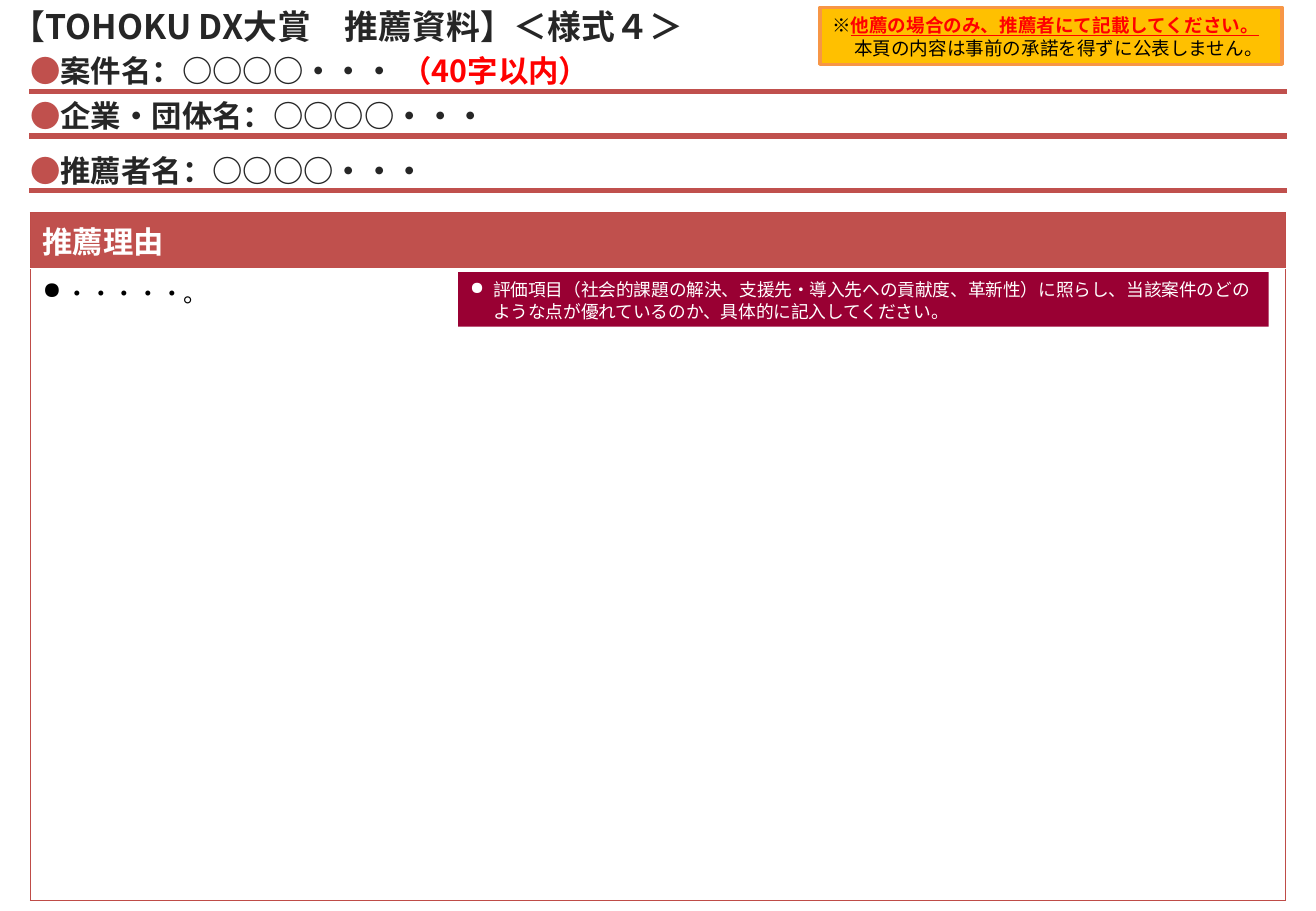
from dataclasses import dataclass

from lxml.etree import SubElement
from pptx import Presentation
from pptx.dml.color import RGBColor
from pptx.enum.shapes import MSO_CONNECTOR as Conn, MSO_SHAPE as Shape
from pptx.enum.text import MSO_ANCHOR as Anchor, MSO_AUTO_SIZE as Fit, PP_ALIGN as Align
from pptx.oxml.ns import qn
from pptx.util import Emu, Pt

PX = 9144  # 100 px to the inch


@dataclass(frozen=True)
class Theme:
    font: str = "Noto Sans CJK JP"
    accent: str = "C0504D"
    border: str = "BF4C48"
    ink: str = "262626"
    black: str = "000000"
    white: str = "FFFFFF"
    red: str = "FF0000"
    amber: str = "FFC000"
    orange: str = "F79646"
    wine: str = "990033"
    title: float = 20
    heading: float = 18
    body: float = 14
    notice: float = 11
    hint: float = 10.5
    leading: float = 1.25


T = Theme()


def px(n):
    return Emu(n * PX)


def rgb(color):
    return RGBColor.from_string(color)


def add_run(p, text, *, size, color, bold=False, underline=False):
    r = p.add_run()
    r.text = text
    f = r.font
    f.size, f.bold, f.underline, f.name = Pt(size), bold, underline, T.font
    f.color.rgb = rgb(color)
    SubElement(r._r.get_or_add_rPr(), qn("a:ea"), typeface=T.font)


def indent(p, left, bullet=None):
    pPr = p._p.get_or_add_pPr()
    pPr.set("marL", str(px(left)))
    if bullet:
        pPr.set("indent", str(-px(left)))
        SubElement(pPr, qn("a:buChar"), char=bullet)


class Sheet:
    def __init__(self, prs, theme):
        self.t = theme
        self.s = prs.slides.add_slide(prs.slide_layouts[6])

    def fill_text(self, tf, paragraphs, anchor=Anchor.TOP, wrap=True):
        """Each paragraph is a list of (text, format) pairs."""
        tf.word_wrap, tf.auto_size, tf.vertical_anchor = wrap, Fit.SHAPE_TO_FIT_TEXT, anchor
        for i, runs in enumerate(paragraphs):
            p = tf.add_paragraph() if i else tf.paragraphs[0]
            p.alignment = Align.LEFT
            p.line_spacing = Pt(runs[0][1]["size"] * self.t.leading)
            for text, fmt in runs:
                add_run(p, text, **fmt)
        return tf

    def text(self, x, y, w, h, runs, anchor=Anchor.TOP):
        tb = self.s.shapes.add_textbox(px(x), px(y), px(w), px(h))
        self.fill_text(tb.text_frame, [runs], anchor)

    def box(self, x, y, w, h, paragraphs, fill, line=None, wrap=True):
        sp = self.s.shapes.add_shape(Shape.RECTANGLE, px(x), px(y), px(w), px(h))
        sp.shadow.inherit = False
        sp.fill.solid()
        sp.fill.fore_color.rgb = rgb(fill)
        if line:
            sp.line.color.rgb, sp.line.width = rgb(line), Pt(2)
        else:
            sp.line.fill.background()
        return self.fill_text(sp.text_frame, paragraphs, wrap=wrap)

    def rule(self, x1, x2, y):
        c = self.s.shapes.add_connector(Conn.STRAIGHT, px(x1), px(y), px(x2), px(y))
        c.line.color.rgb, c.line.width = rgb(self.t.accent), Pt(3)
        SubElement(c._element.spPr, qn("a:effectLst"))

    def table(self, x, y, w, heights):
        tbl = self.s.shapes.add_table(len(heights), 1, px(x), px(y), px(w), px(sum(heights))).table
        tbl.first_row = tbl.horz_banding = False
        for row, h in zip(tbl.rows, heights):
            row.height = px(h)
        return tbl

    def cell(self, cell, text, sides, fill=None, bullet=None, **fmt):
        p = cell.text_frame.paragraphs[0]
        add_run(p, text, **fmt)
        if bullet:
            indent(p, 19, bullet)
        tcPr = cell._tc.get_or_add_tcPr()
        for side in sides:
            ln = SubElement(tcPr, qn(f"a:ln{side}"), w=str(Pt(0.75)))
            SubElement(SubElement(ln, qn("a:solidFill")), qn("a:srgbClr"), val=self.t.border)
        if fill:
            cell.fill.solid()
            cell.fill.fore_color.rgb = rgb(fill)
        else:
            cell.fill.background()


def main():
    prs = Presentation()
    prs.slide_width, prs.slide_height = px(1083), px(750)
    sheet = Sheet(prs, T)

    # Reason table
    tbl = sheet.table(25, 175, 1033, [42, 520])
    sheet.cell(tbl.cell(0, 0), "推薦理由", "LRT", fill=T.accent,
               size=T.heading, color=T.white, bold=True)
    sheet.cell(tbl.cell(1, 0), "・・・・・。", "LRTB", bullet="●", size=T.body, color=T.black)

    # Title
    sheet.text(0, -1, 803, 44, [("【TOHOKU DX大賞　推薦資料】＜様式４＞",
               dict(size=T.title, color=T.ink, bold=True))], Anchor.MIDDLE)

    # Underlined entry lines
    entries = [(37, 543, "案件名", " （40字以内）"),
               (74, 486, "企業・団体名", None),
               (119, 486, "推薦者名", None)]
    for y, w, label, limit in entries:
        runs = [("●", dict(size=T.heading, color=T.accent)),
                (f"{label}：○○○○・・・", dict(size=T.heading, color=T.ink, bold=True))]
        if limit:
            runs.append((limit, dict(size=T.heading, color=T.red, bold=True)))
        sheet.text(15, y, w, 40, runs)
        sheet.rule(24, 1059, y + 38)

    # Notice for recommenders
    plain = dict(size=T.notice, color=T.black)
    tf = sheet.box(675, 6, 380, 47, [
        [("※", plain), ("他薦の場合のみ、推薦者にて記載してください。",
                        dict(size=T.notice, color=T.red, bold=True, underline=True))],
        [("本頁の内容は事前の承諾を得ずに公表しません。", plain)],
    ], T.amber, T.orange, wrap=False)
    indent(tf.paragraphs[1], 18)

    # Writing hint
    tf = sheet.box(377, 224, 667, 45, [[(
        "評価項目（社会的課題の解決、支援先・導入先への貢献度、革新性）に照らし、"
        "当該案件のどのような点が優れているのか、具体的に記入してください。",
        dict(size=T.hint, color=T.white))]], T.wine)
    indent(tf.paragraphs[0], 19, "●")

    prs.save("out.pptx")


if __name__ == "__main__":
    main()
